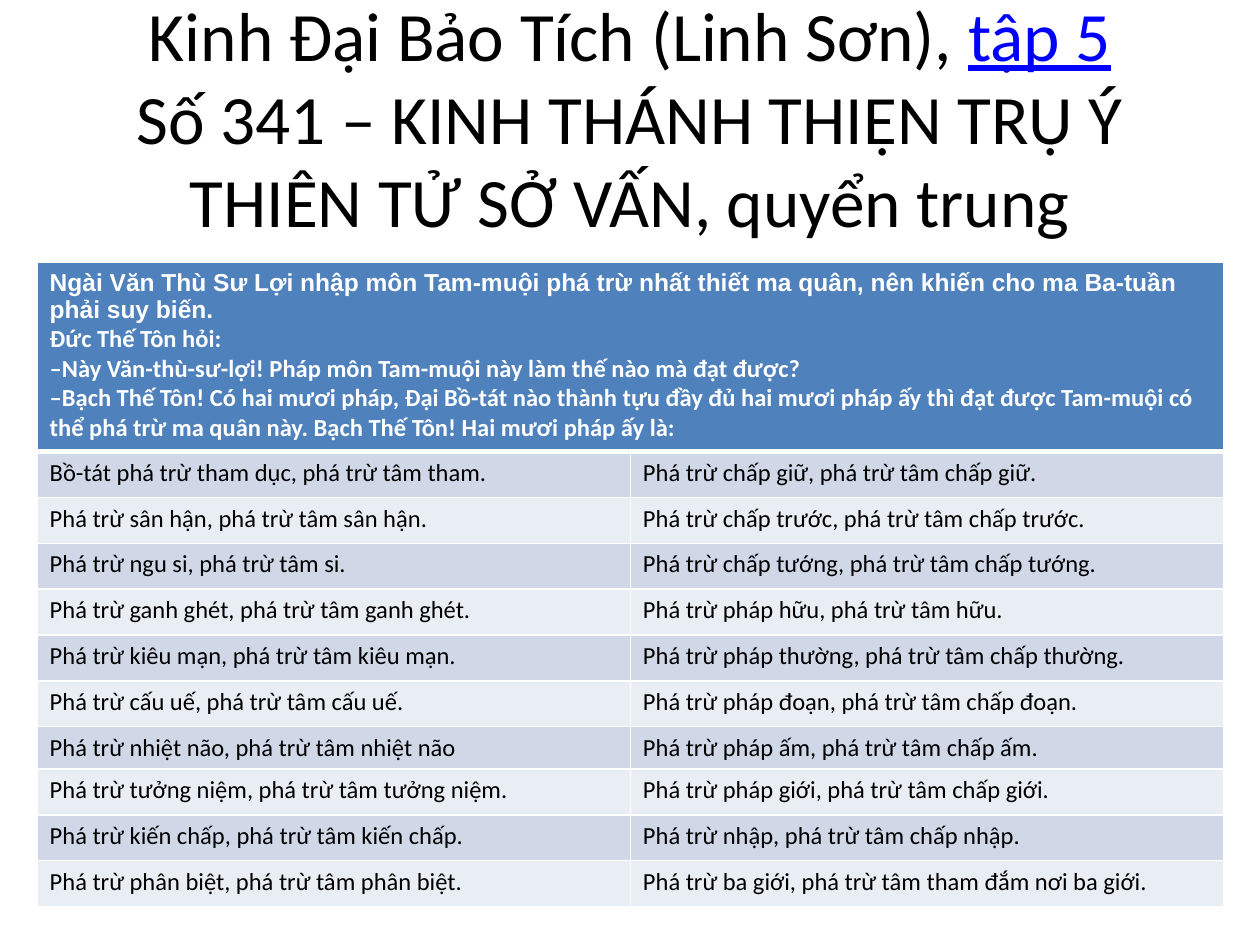
from dataclasses import dataclass

import lxml.etree
import pptx
import pptx.dml.color
import pptx.enum.text
import pptx.oxml.ns
import pptx.util

Pt = pptx.util.Pt
FONT = "Calibri"
WHITE, BLACK, LINK = "FFFFFF", "000000", "0000FF"
HEADER, BANDS = "4F81BD", ("D0D8E8", "E9EDF4")


@dataclass
class Para:
    text: str
    font: str = FONT
    color: str = BLACK
    bold: bool = False


INTRO = [
    Para("Ngài Văn Thù Sư Lợi nhập môn Tam-muội phá trừ nhất thiết ma quân, "
         "nên khiến cho ma Ba-tuần phải suy biến.", "Arial", WHITE, True),
    Para("Đức Thế Tôn hỏi:", FONT, WHITE, True),
    Para("–Này Văn-thù-sư-lợi! Pháp môn Tam-muội này làm thế nào mà đạt được?",
         FONT, WHITE, True),
    Para("–Bạch Thế Tôn! Có hai mươi pháp, Đại Bồ-tát nào thành tựu đầy đủ hai mươi "
         "pháp ấy thì đạt được Tam-muội có thể phá trừ ma quân này. Bạch Thế Tôn! "
         "Hai mươi pháp ấy là:", FONT, WHITE, True),
]
METHODS = [
    ("Bồ-tát phá trừ tham dục, phá trừ tâm tham.",
     "Phá trừ chấp giữ, phá trừ tâm chấp giữ."),
    ("Phá trừ sân hận, phá trừ tâm sân hận.",
     "Phá trừ chấp trước, phá trừ tâm chấp trước."),
    ("Phá trừ ngu si, phá trừ tâm si.",
     "Phá trừ chấp tướng, phá trừ tâm chấp tướng."),
    ("Phá trừ ganh ghét, phá trừ tâm ganh ghét.",
     "Phá trừ pháp hữu, phá trừ tâm hữu."),
    ("Phá trừ kiêu mạn, phá trừ tâm kiêu mạn.",
     "Phá trừ pháp thường, phá trừ tâm chấp thường."),
    ("Phá trừ cấu uế, phá trừ tâm cấu uế.",
     "Phá trừ pháp đoạn, phá trừ tâm chấp đoạn."),
    ("Phá trừ nhiệt não, phá trừ tâm nhiệt não",
     "Phá trừ pháp ấm, phá trừ tâm chấp ấm."),
    ("Phá trừ tưởng niệm, phá trừ tâm tưởng niệm.",
     "Phá trừ pháp giới, phá trừ tâm chấp giới."),
    ("Phá trừ kiến chấp, phá trừ tâm kiến chấp.",
     "Phá trừ nhập, phá trừ tâm chấp nhập."),
    ("Phá trừ phân biệt, phá trừ tâm phân biệt.",
     "Phá trừ ba giới, phá trừ tâm tham đắm nơi ba giới."),
]
HEADER_H, ROW_H, SHORT_ROW_H, SHORT_ROW = 106.5, 26.2, 24.2, 7


def rgb(color: str) -> pptx.dml.color.RGBColor:
    return pptx.dml.color.RGBColor.from_string(color)


def set_borders(cell, bottom: float = 1, top: float = 1) -> None:
    tcPr = cell._tc.get_or_add_tcPr()
    qn = pptx.oxml.ns.qn
    sides = (("lnL", 1), ("lnR", 1), ("lnT", top), ("lnB", bottom))
    for i, (side, width) in enumerate(sides):
        ln = lxml.etree.Element(qn(f"a:{side}"), w=str(Pt(width)))
        fill = lxml.etree.SubElement(ln, qn("a:solidFill"))
        lxml.etree.SubElement(fill, qn("a:srgbClr"), val=WHITE)
        tcPr.insert(i, ln)


def fill_cell(cell, paras: list[Para], color: str,
              bottom: float = 1, top: float = 1) -> None:
    cell.fill.solid()
    cell.fill.fore_color.rgb = rgb(color)
    set_borders(cell, bottom, top)
    tf = cell.text_frame
    for i, para in enumerate(paras):
        p = tf.add_paragraph() if i else tf.paragraphs[0]
        p.text = para.text
        p.font.name, p.font.size, p.font.bold = para.font, Pt(14), para.bold
        p.font.color.rgb = rgb(para.color)


def add_title(s) -> None:
    tf = s.shapes.add_textbox(Pt(36), Pt(21.6), Pt(648), Pt(90)).text_frame
    tf.word_wrap = True
    tf.vertical_anchor = pptx.enum.text.MSO_ANCHOR.MIDDLE
    p = tf.paragraphs[0]
    p.alignment = pptx.enum.text.PP_ALIGN.CENTER
    p.font.name, p.font.size = FONT, Pt(39.6)
    p.font.color.rgb = rgb(BLACK)
    p.add_run().text = "Kinh Đại Bảo Tích (Linh Sơn), "
    r = p.add_run()
    r.text = "tập 5"
    r.font.underline = True
    r.font.color.rgb = rgb(LINK)
    p.add_line_break()
    p.add_run().text = "Số 341 – KINH THÁNH THIẸN TRỤ Ý THIÊN TỬ SỞ VẤN, quyển trung"


def add_methods_table(s) -> None:
    heights = [HEADER_H] + [ROW_H] * len(METHODS)
    heights[SHORT_ROW] = SHORT_ROW_H
    table = s.shapes.add_table(len(heights), 2, Pt(21.2), Pt(150),
                               Pt(678), Pt(sum(heights))).table
    for row, height in zip(table.rows, heights):
        row.height = Pt(height)

    # Introduction across both columns
    table.cell(0, 0).merge(table.cell(0, 1))
    fill_cell(table.cell(0, 0), INTRO, HEADER, bottom=3)
    set_borders(table.cell(0, 1), bottom=3)

    # Twenty methods in banded rows
    for i, pair in enumerate(METHODS):
        for j, text in enumerate(pair):
            fill_cell(table.cell(i + 1, j), [Para(text)], BANDS[i % 2],
                      top=1 if i else 3)


def main() -> None:
    prs = pptx.Presentation()
    prs.slide_width, prs.slide_height = Pt(720), Pt(540)
    s = prs.slides.add_slide(prs.slide_layouts[6])
    add_title(s)
    add_methods_table(s)
    prs.save("out.pptx")


if __name__ == "__main__":
    main()
